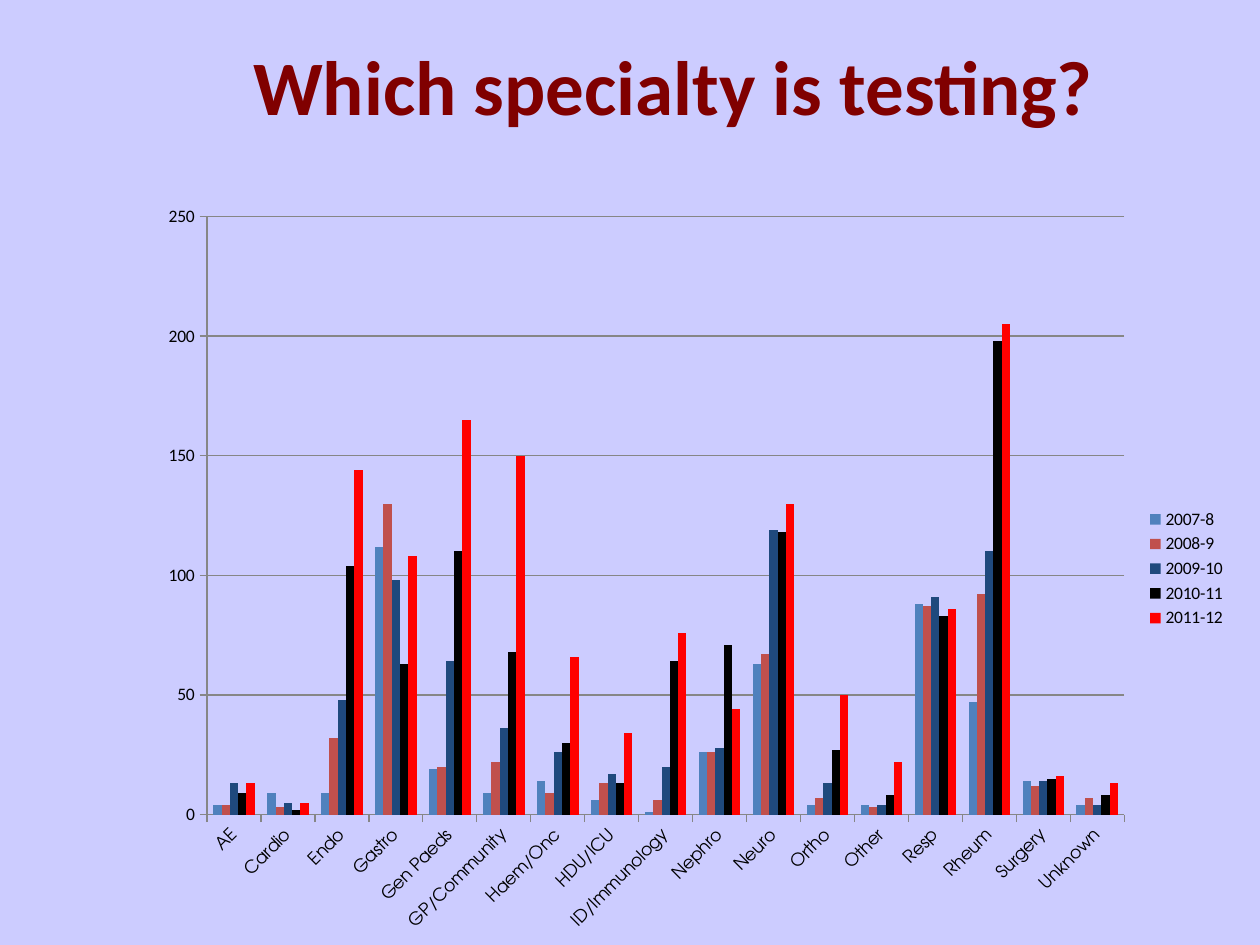
from lxml import etree
from pptx import Presentation
from pptx import util as u
from pptx.chart import data
from pptx.dml import color
from pptx.enum import chart as ch, text
from pptx.oxml import ns

Pt = u.Pt


def rgb(hue):
    return color.RGBColor.from_string(hue)


deck = Presentation()
deck.slide_width, deck.slide_height = Pt(720), Pt(540)
slide = deck.slides.add_slide(deck.slide_layouts[5])
back = slide.background.fill
back.solid()
back.fore_color.rgb = rgb("CCCCFF")

title = slide.shapes.title
title.left, title.top, title.width, title.height = Pt(78), Pt(6), Pt(614), Pt(85)
frame = title.text_frame
frame.text = "Which specialty is testing?"
frame.vertical_anchor = text.MSO_ANCHOR.MIDDLE
head = frame.paragraphs[0]
head.alignment = text.PP_ALIGN.CENTER
head.font.name, head.font.size, head.font.bold = "Calibri", Pt(44), True
head.font.color.rgb = rgb("800000")

years = [
    ("2007-8", "4F81BD", [4, 9, 9, 112, 19, 9, 14, 6, 1, 26, 63, 4, 4, 88, 47, 14, 4]),
    ("2008-9", "C0504D", [4, 3, 32, 130, 20, 22, 9, 13, 6, 26, 67, 7, 3, 87, 92, 12, 7]),
    ("2009-10", "1F497D", [13, 5, 48, 98, 64, 36, 26, 17, 20, 28, 119, 13, 4, 91, 110, 14, 4]),
    ("2010-11", "000000", [9, 2, 104, 63, 110, 68, 30, 13, 64, 71, 118, 27, 8, 83, 198, 15, 8]),
    ("2011-12", "FF0000", [13, 5, 144, 108, 165, 150, 66, 34, 76, 44, 130, 50, 22, 86, 205, 16, 13]),
]
table = data.CategoryChartData()
table.categories = [
    "AE", "Cardio", "Endo", "Gastro", "Gen Paeds", "GP/Community",
    "Haem/Onc", "HDU/ICU", "ID/Immunology", "Nephro", "Neuro", "Ortho",
    "Other", "Resp", "Rheum", "Surgery", "Unknown",
]
for name, hue, vals in years:
    table.add_series(name, vals)

chart = slide.shapes.add_chart(
    ch.XL_CHART_TYPE.COLUMN_CLUSTERED, Pt(84), Pt(110), Pt(624), Pt(430), table
).chart
chart.has_title = False
chart.font.name, chart.font.size = "Calibri", Pt(10)
chart.font.color.rgb = rgb("000000")
chart.has_legend = True
chart.legend.position = ch.XL_LEGEND_POSITION.RIGHT
chart.legend.include_in_layout = False

plot = chart.plots[0]
plot.gap_width, plot.overlap, plot.vary_by_categories = 150, 0, False
for bars, (name, hue, vals) in zip(plot.series, years):
    bars.format.fill.solid()
    bars.format.fill.fore_color.rgb = rgb(hue)
    bars.invert_if_negative = False

cats, scale = chart.category_axis, chart.value_axis
scale.minimum_scale, scale.maximum_scale, scale.major_unit = 0, 250, 50
scale.has_major_gridlines = True
for line in (cats.format.line, scale.format.line, scale.major_gridlines.format.line):
    line.color.rgb = rgb("868686")
    line.width = Pt(0.75)
for axis in (cats, scale):
    axis.major_tick_mark = ch.XL_TICK_MARK.OUTSIDE
    axis.minor_tick_mark = ch.XL_TICK_MARK.NONE

font = cats.tick_labels.font
font.name, font.size = "TeX Gyre Adventor", Pt(10)
font.color.rgb = rgb("000000")
body = cats._element.find(".//" + ns.qn("a:bodyPr"))
body.set("rot", "-2700000")
body.set("vert", "horz")

area = chart._chartSpace.find(".//" + ns.qn("c:plotArea"))
for old in area.findall(ns.qn("c:layout")):
    area.remove(old)
layout = etree.Element(ns.qn("c:layout"))
area.insert(0, layout)
manual = etree.SubElement(layout, ns.qn("c:manualLayout"))
for tag, val in [
    ("layoutTarget", "inner"), ("xMode", "edge"), ("yMode", "edge"),
    ("x", "0.055"), ("y", "0.032"), ("w", "0.84"), ("h", "0.795"),
]:
    etree.SubElement(manual, ns.qn("c:" + tag)).set("val", val)

deck.save("out.pptx")
